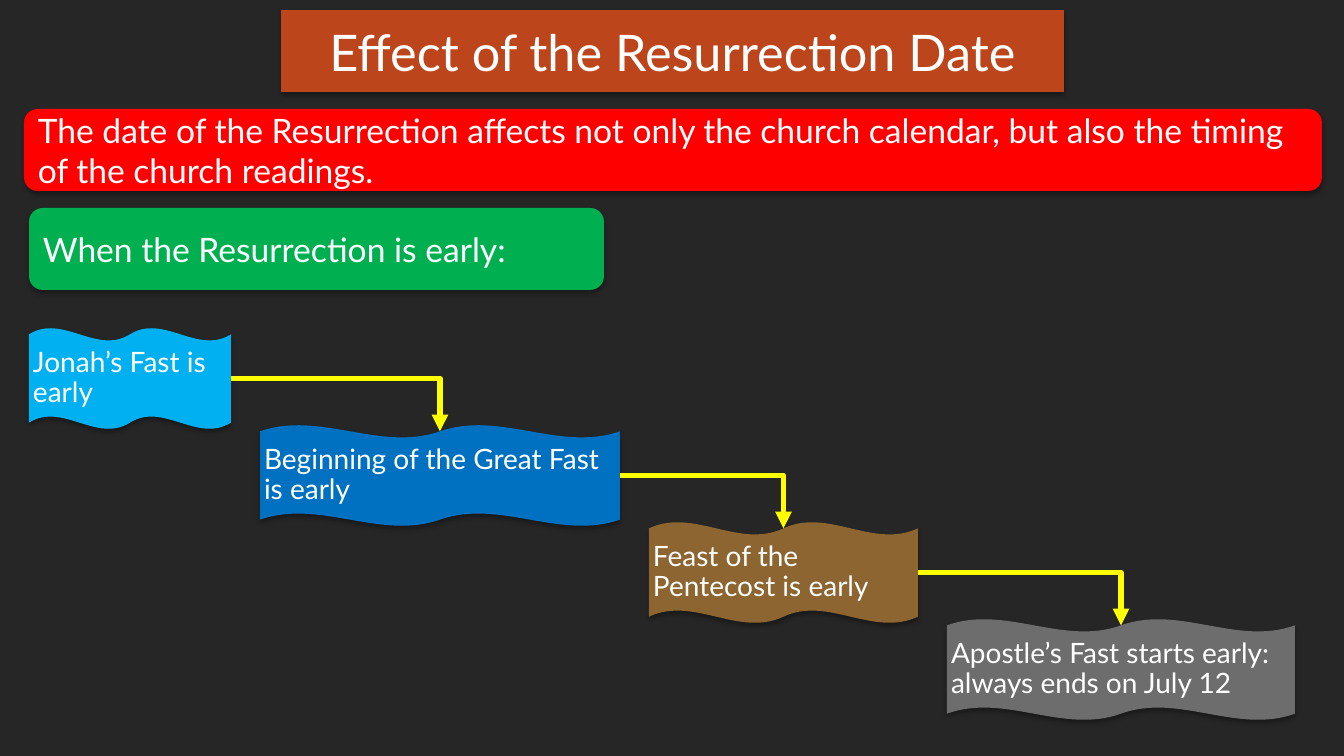
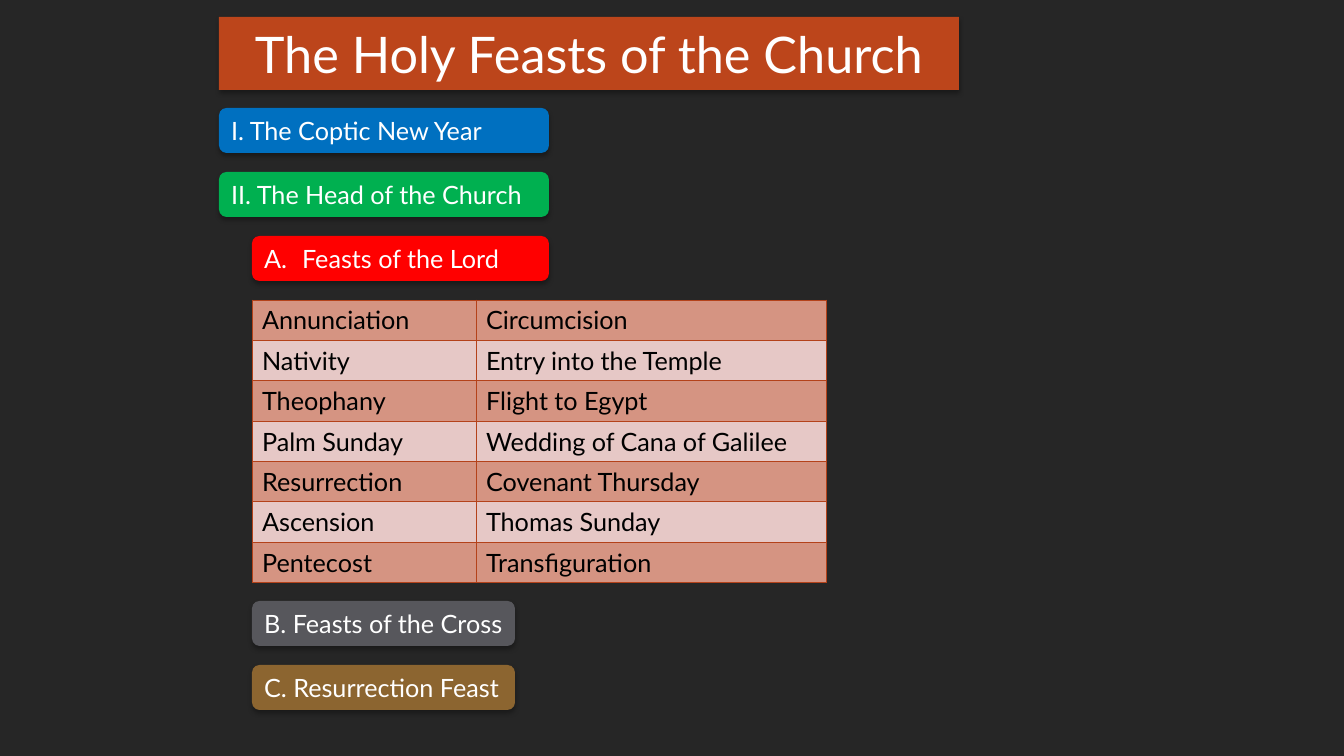
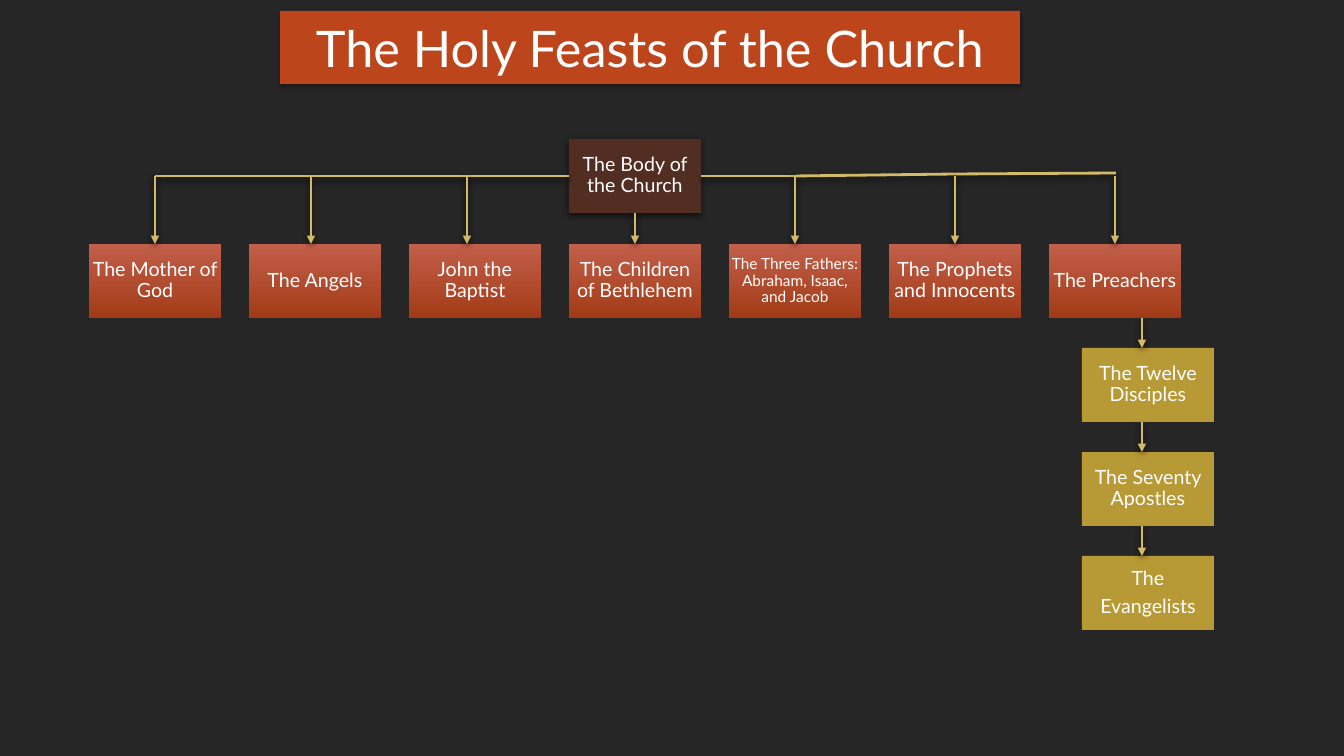
from lxml.etree import SubElement
from pptx import Presentation
from pptx.dml.color import RGBColor
from pptx.enum.shapes import MSO_CONNECTOR as CONN, MSO_SHAPE as SHAPE
from pptx.enum.text import MSO_ANCHOR as ANCHOR, MSO_AUTO_SIZE as AUTO, PP_ALIGN as ALIGN
from pptx.oxml.ns import qn
from pptx.util import Pt

# Style
WIDTH, HEIGHT = 1344, 756
SCALE = 12192000 / WIDTH
FONT = "Lato"
DARK = RGBColor(0x26, 0x26, 0x26)
WHITE = RGBColor(0xFF, 0xFF, 0xFF)
BLACK = RGBColor(0x00, 0x00, 0x00)
RUST = RGBColor(0xBC, 0x45, 0x1B)
RED = RGBColor(0xFF, 0x00, 0x00)
GREEN = RGBColor(0x00, 0xB0, 0x50)
SKY = RGBColor(0x00, 0xB0, 0xF0)
BLUE = RGBColor(0x00, 0x70, 0xC0)
BRONZE = RGBColor(0x8C, 0x65, 0x30)
GRAY = RGBColor(0x6D, 0x6D, 0x6D)
SLATE = RGBColor(0x57, 0x57, 0x5C)
YELLOW = RGBColor(0xFF, 0xFF, 0x00)
BROWN = RGBColor(0x52, 0x2D, 0x22)
GOLD = RGBColor(0xB7, 0x99, 0x35)
PALE_GOLD = RGBColor(0xD3, 0xBA, 0x68)
BRICK = (RGBColor(0xC2, 0x5F, 0x4A), RGBColor(0xA2, 0x3B, 0x17))
BANDS = (RGBColor(0xD5, 0x94, 0x82), RGBColor(0xE6, 0xC8, 0xC6))
BORDER = RGBColor(0xB4, 0x42, 0x1A)
SOFT = (32, 3.5, 2.2)  # shadow: opacity %, blur pt, distance pt
STRONG = (60, 5, 2)
TOP, LEFT, BOTTOM, RIGHT = range(4)


def px(n):
    return round(n * SCALE)


def write(tf, text, size=18, color=WHITE, align=ALIGN.LEFT, spacing=None,
          after=0, inset=None, numbering=None, indent=0):
    """Fill a text frame; each line of text becomes a paragraph."""
    tf.word_wrap = True
    tf.auto_size = AUTO.NONE
    tf.vertical_anchor = ANCHOR.MIDDLE
    if inset is not None:
        tf.margin_left = tf.margin_top = tf.margin_right = tf.margin_bottom = px(inset)
    lines = text.split("\n")
    for i, line in enumerate(lines):
        p = tf.paragraphs[0] if i == 0 else tf.add_paragraph()
        p.alignment = align
        if spacing:
            p.line_spacing = spacing
        if i < len(lines) - 1:
            p.space_after = Pt(after)
        if numbering:
            pPr = p._p.get_or_add_pPr()
            pPr.set("marL", str(px(indent)))
            pPr.set("indent", str(-px(indent)))
            SubElement(pPr, qn("a:buAutoNum"), type=numbering)
        r = p.add_run()
        r.text = line
        r.font.name, r.font.size, r.font.color.rgb = FONT, Pt(size), color


def cast_shadow(spPr, shadow):
    effects = spPr.find(qn("a:effectLst"))
    if effects is None:
        effects = SubElement(spPr, qn("a:effectLst"))
    if shadow:
        opacity, blur, distance = shadow
        outer = SubElement(effects, qn("a:outerShdw"), blurRad=str(Pt(blur)),
                           dist=str(Pt(distance)), dir="5400000", rotWithShape="0")
        color = SubElement(outer, qn("a:srgbClr"), val=str(BLACK))
        SubElement(color, qn("a:alpha"), val=str(opacity * 1000))


class Deck:
    def __init__(self):
        self.prs = Presentation()
        self.prs.slide_width, self.prs.slide_height = px(WIDTH), px(HEIGHT)
        fill = self.prs.slide_master.background.fill
        fill.solid()
        fill.fore_color.rgb = DARK

    def slide(self, title, x, y, w, h):
        """Start a slide with its title in a rounded band."""
        self.s = self.prs.slides.add_slide(self.prs.slide_layouts[5])
        sp = self.s.shapes.title
        sp.left, sp.top, sp.width, sp.height = map(px, (x, y, w, h))
        geom = SubElement(sp._element.spPr, qn("a:prstGeom"), prst="roundRect")
        SubElement(geom, qn("a:avLst"))
        self.paint(sp, RUST, SOFT)
        write(sp.text_frame, title, size=36, align=ALIGN.CENTER)

    def paint(self, sp, fill, shadow):
        if isinstance(fill, RGBColor):
            sp.fill.solid()
            sp.fill.fore_color.rgb = fill
        else:
            sp.fill.gradient()
            sp.fill.gradient_angle = 270
            for stop, color in zip(sp.fill.gradient_stops, fill):
                stop.color.rgb = color
        sp.line.fill.background()
        cast_shadow(sp._element.spPr, shadow)

    def box(self, text, x, y, w, h, fill, kind=SHAPE.ROUNDED_RECTANGLE,
            shadow=SOFT, **fmt):
        sp = self.s.shapes.add_shape(kind, *map(px, (x, y, w, h)))
        self.paint(sp, fill, shadow)
        write(sp.text_frame, text, **fmt)
        return sp

    def line(self, start, end, begin=None, finish=None, kind=CONN.STRAIGHT,
             color=PALE_GOLD, width=2, arrow=True, shadow=STRONG):
        """Draw a connector; begin and finish are (shape, side) joints."""
        c = self.s.shapes.add_connector(kind, *map(px, start + end))
        if begin:
            c.begin_connect(*begin)
        if finish:
            c.end_connect(*finish)
        c.line.color.rgb, c.line.width = color, Pt(width)
        if arrow:
            SubElement(c._element.spPr.find(qn("a:ln")), qn("a:tailEnd"), type="triangle")
        cast_shadow(c._element.spPr, shadow)
        return c

    def table(self, rows, x, y, widths, row_h):
        t = self.s.shapes.add_table(len(rows), len(widths), px(x), px(y),
                                    px(sum(widths)), px(row_h * len(rows))).table
        t.first_row = t.horz_banding = False
        for col, w in zip(t.columns, widths):
            col.width = px(w)
        for i, row in enumerate(rows):
            t.rows[i].height = px(row_h)
            for j, text in enumerate(row):
                cell = t.cell(i, j)
                r = cell.text_frame.paragraphs[0].add_run()
                r.text = text
                r.font.name, r.font.size, r.font.color.rgb = FONT, Pt(18), BLACK
                self.border(cell._tc.get_or_add_tcPr())
                cell.fill.solid()
                cell.fill.fore_color.rgb = BANDS[i % 2]

    def border(self, tcPr):
        for side in "LRTB":
            ln = SubElement(tcPr, qn(f"a:ln{side}"), w=str(Pt(0.75)))
            SubElement(SubElement(ln, qn("a:solidFill")), qn("a:srgbClr"), val=str(BORDER))


def resurrection_date(d):
    d.slide("Effect of the Resurrection Date", 281, 10, 783, 82)
    d.box("The date of the Resurrection affects not only the church calendar, "
          "but also the timing of the church readings.", 24, 109, 1298, 82, RED, size=24)
    d.box("When the Resurrection is early:", 29, 208, 575, 82, GREEN, size=24)

    # Staircase of waves
    steps = [("Jonah’s Fast is early", 202, SKY),
             ("Beginning of the Great Fast is early", 360, BLUE),
             ("Feast of the Pentecost is early", 269, BRONZE),
             ("Apostle’s Fast starts early: always ends on July 12", 348, GRAY)]
    x, waves = 29, []
    for i, (text, w, fill) in enumerate(steps):
        waves.append(d.box(text, x, 328 + 97 * i, w, 101, fill, SHAPE.DOUBLE_WAVE,
                           size=20, spacing=0.9, inset=4))
        x += w + 29
    for upper, lower in zip(waves, waves[1:]):
        c = d.line((0, 0), (0, 0), (upper, RIGHT), (lower, TOP), CONN.ELBOW,
                   color=YELLOW, width=4, shadow=None)
        c._element.spPr.find(qn("a:prstGeom")).set("prst", "bentConnector2")
        c.end_y = lower.top + lower.height // 16  # crest of the wave


def feast_outline(d):
    d.slide("The Holy Feasts of the Church", 219, 17, 740, 73)
    numbered = {"numbering": "alphaUcPeriod", "indent": 38}
    headings = [("I. The Coptic New Year", 219, 108, 330, BLUE, {}),
                ("II. The Head of the Church", 219, 172, 330, GREEN, {}),
                ("Feasts of the Lord", 252, 236, 297, RED, numbered),
                ("B. Feasts of the Cross", 252, 601, 263, SLATE, {}),
                ("C. Resurrection Feast", 252, 665, 263, BRONZE, {})]
    for text, x, y, w, fill, fmt in headings:
        d.box(text, x, y, w, 45, fill, **fmt)
    d.table([("Annunciation", "Circumcision"),
             ("Nativity", "Entry into the Temple"),
             ("Theophany", "Flight to Egypt"),
             ("Palm Sunday", "Wedding of Cana of Galilee"),
             ("Resurrection", "Covenant Thursday"),
             ("Ascension", "Thomas Sunday"),
             ("Pentecost", "Transfiguration")], 252, 300, (224, 350), 40)


def feast_tree(d):
    d.slide("The Holy Feasts of the Church", 280, 11, 740, 73)
    w, h, row_y, bus_y = 132, 74, 244, 176

    def node(text, x, y, fill, shadow=None, size=14):
        return d.box(text, x, y, w, h, fill, SHAPE.RECTANGLE, shadow, size=size,
                     align=ALIGN.CENTER, spacing=0.9, after=5, inset=1)

    # Boxes
    body = node("The Body of the Church", 569, 139, BROWN, STRONG)
    groups = ["The Mother of God", "The Angels", "John the Baptist",
              "The Children of Bethlehem", "The Three Fathers: Abraham, Isaac, and Jacob",
              "The Prophets and Innocents", "The Preachers"]
    row = [node(text, 89 + 160 * i, row_y, BRICK, size=11 if i == 4 else 14)
           for i, text in enumerate(groups)]
    preachers = ["The Twelve Disciples", "The Seventy Apostles", "The\nEvangelists"]
    for i, text in enumerate(preachers):
        y = 348 + 104 * i
        node(text, 1082, y, GOLD)
        d.line((1142, y - 30), (1142, y))

    # Bus on both sides of the root
    d.line((569, bus_y), (155, bus_y), begin=(body, LEFT), arrow=False)
    bus = [(701, bus_y), (796, 176), (956, 174), (1116, 173)]
    for i, (a, b) in enumerate(zip(bus, bus[1:])):
        d.line(a, b, begin=None if i else (body, RIGHT), arrow=False)

    # Drops to the row
    d.line((635, 213), (635, row_y), (body, BOTTOM), (row[3], TOP))
    for i in (0, 4, 5, 6):
        x = 155 + 160 * i
        d.line((x, bus_y), (x, row_y), finish=(row[i], TOP))
    for x in (311, 467):
        d.line((x, bus_y), (x, row_y))


def main():
    d = Deck()
    resurrection_date(d)
    feast_outline(d)
    feast_tree(d)
    d.prs.save("out.pptx")


if __name__ == "__main__":
    main()
